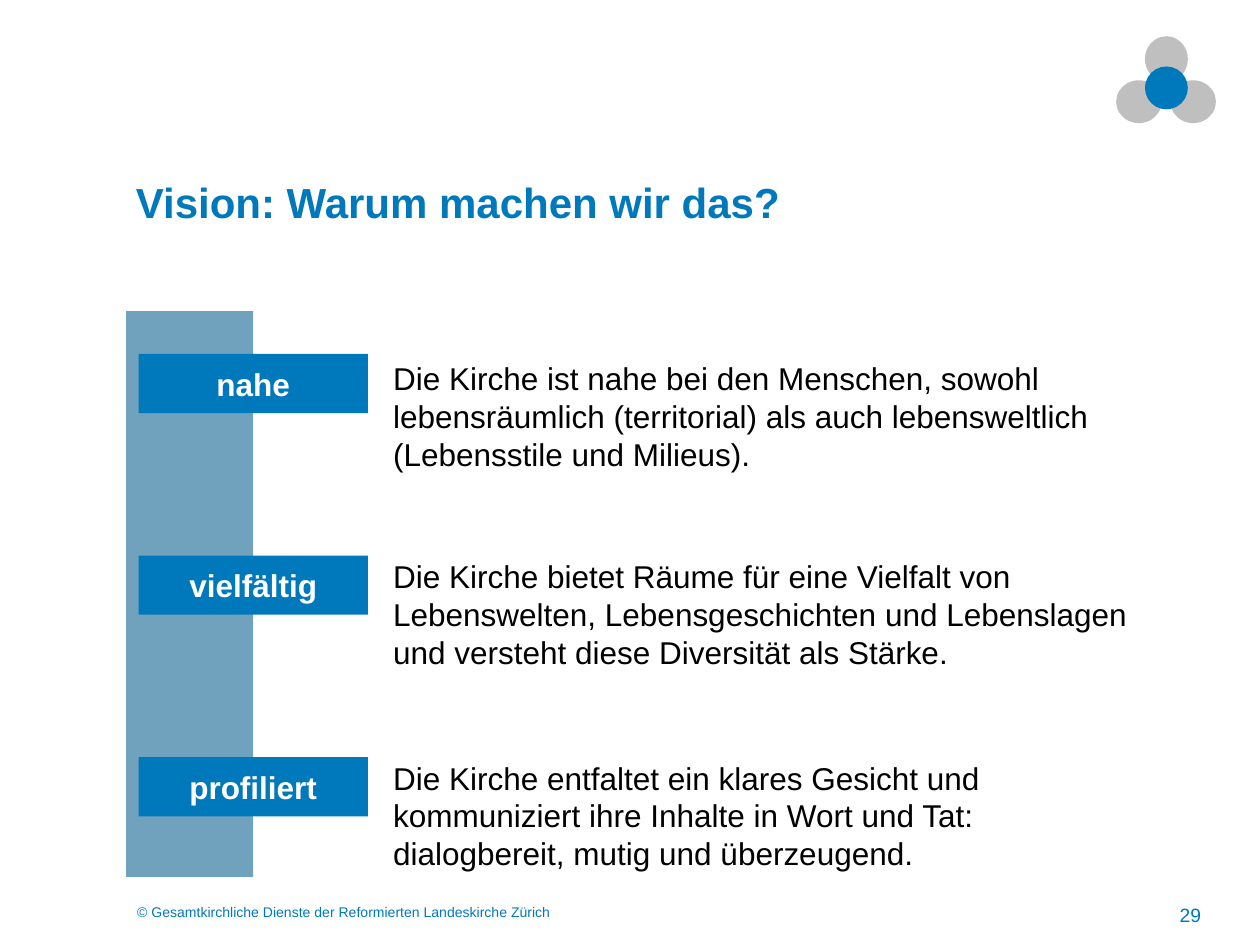
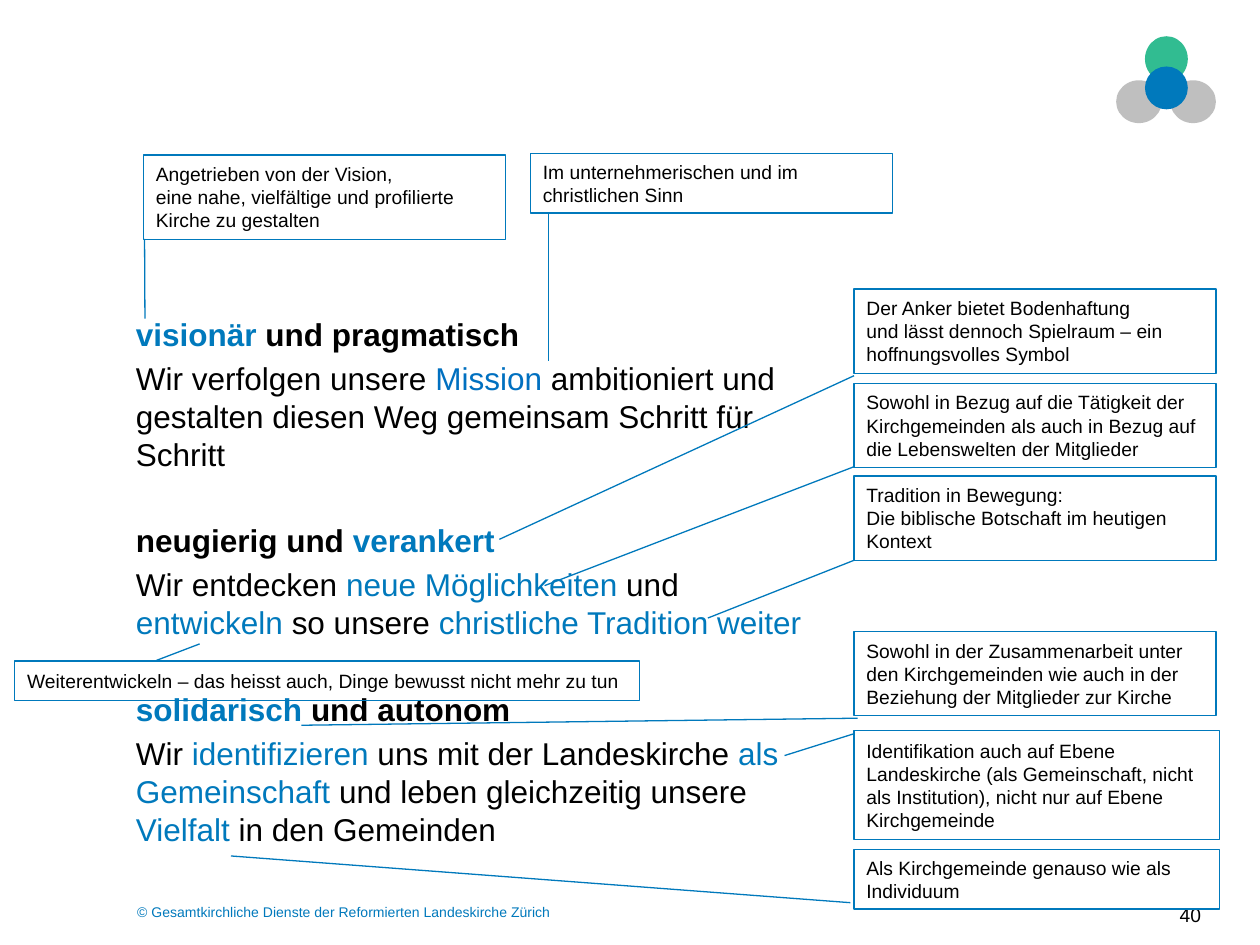
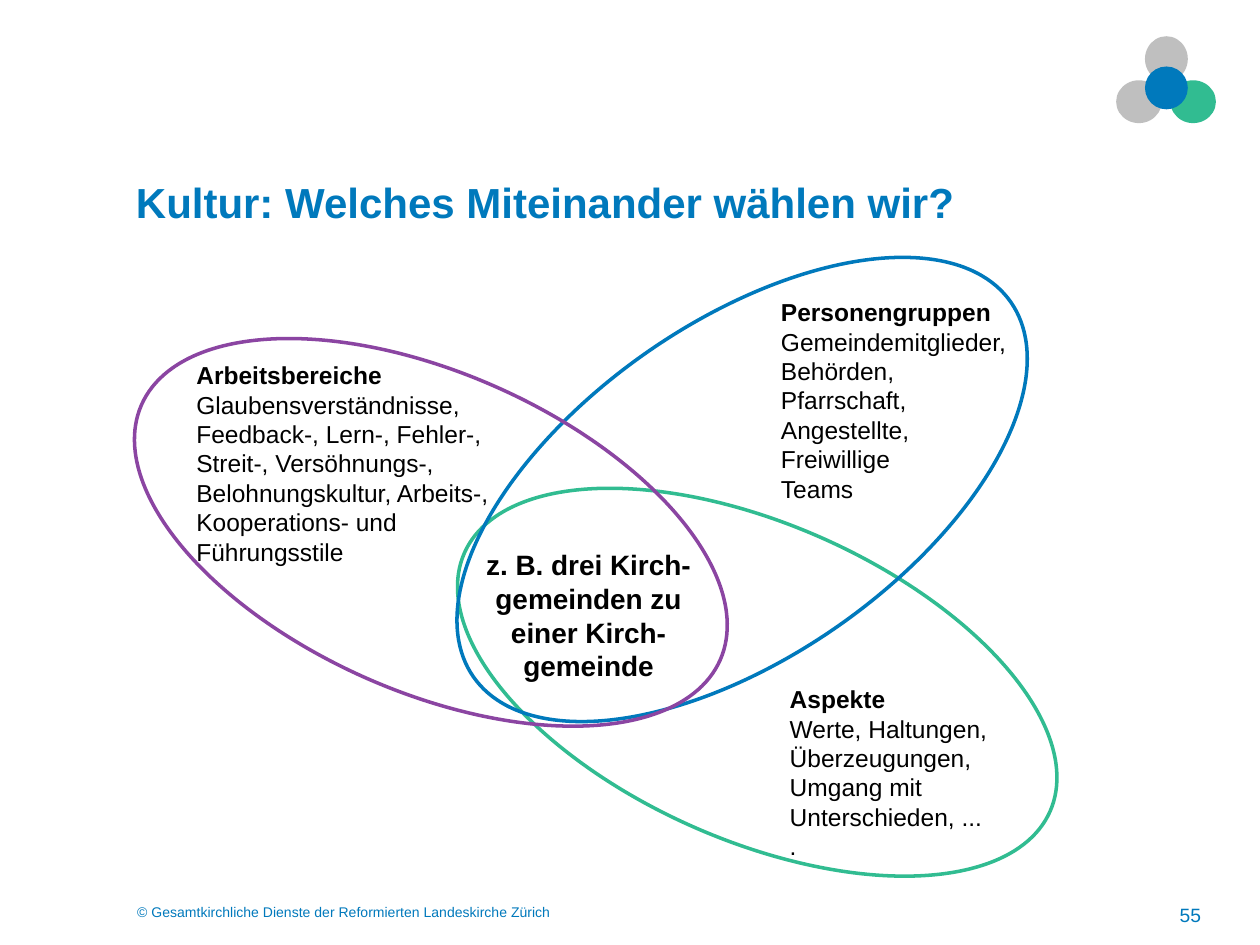
from dataclasses import dataclass
from pptx import Presentation
from pptx.dml.color import RGBColor
from pptx.enum import shapes, text
from pptx.util import Pt


@dataclass(frozen=True)
class Theme:
    """Colours, type sizes and line widths of the deck."""
    font: str = "Arial"
    blue: str = "0079BC"
    sky: str = "0070C0"
    steel: str = "71A2BD"
    green: str = "31BC91"
    plum: str = "8B45A2"
    grey: str = "BFBFBF"
    black: str = "000000"
    white: str = "FFFFFF"
    head: int = 24
    body: int = 18
    core: int = 16
    list: int = 14
    note: int = 11
    foot: int = 8
    thin: float = 0.75
    thick: float = 2


T = Theme()
FORM = shapes.MSO_SHAPE
LEFT, MID, RIGHT = text.PP_ALIGN.LEFT, text.PP_ALIGN.CENTER, text.PP_ALIGN.RIGHT
TOP, CENTRE = text.MSO_ANCHOR.TOP, text.MSO_ANCHOR.MIDDLE
PAD = (7.2, 3.6)
OWNER = "© Gesamtkirchliche Dienste der Reformierten Landeskirche Zürich"

VALUES = [
    ("nahe", 202.3, ["Die Kirche ist nahe bei den Menschen, sowohl lebensräumlich "
                     "(territorial) als auch lebensweltlich (Lebensstile und Milieus)."]),
    ("vielfältig", 315.4, ["Die Kirche bietet Räume für eine Vielfalt von Lebenswelten, "
                           "Lebensgeschichten und Lebenslagen und versteht diese "
                           "Diversität als Stärke."]),
    ("profiliert", 430.6, ["Die Kirche entfaltet ein klares Gesicht und kommuniziert "
                           "ihre Inhalte in Wort und Tat:",
                           "dialogbereit, mutig und überzeugend."]),
]

CREED = [
    ([("visionär", T.blue), " und pragmatisch"],
     ["Wir verfolgen unsere ", ("Mission ", T.sky),
      "ambitioniert und gestalten diesen Weg gemeinsam Schritt für Schritt"]),
    (["neugierig und ", ("verankert", T.blue)],
     ["Wir entdecken ", ("neue Möglichkeiten ", T.blue), "und ", ("entwickeln", T.blue),
      " so unsere ", ("christliche Tradition weiter", T.blue)]),
    ([("solidarisch ", T.blue), "und autonom"],
     ["Wir ", ("identifizieren", T.blue), " uns mit der Landeskirche ",
      ("als Gemeinschaft", T.blue), " und leben gleichzeitig unsere ",
      ("Vielfalt", T.blue), " in den Gemeinden"]),
]

NOTES = [
    ((82, 88.6, 206.8, 48.2), (0.995, 0.003, 1.94, 0.004),
     ["Angetrieben von der Vision,\neine nahe, vielfältige und profilierte Kirche zu gestalten"]),
    ((303.1, 87.8, 206.8, 34), (1.01, 0.05, 3.49, 0.05),
     ["Im unternehmerischen und im christlichen Sinn"]),
    ((488, 165.1, 206.8, 48.2), (1.03, 0, 2.97, -0.98),
     ["Der Anker bietet Bodenhaftung\nund lässt dennoch Spielraum – ein hoffnungsvolles Symbol"]),
    ((488, 219, 206.8, 48.2), (0.99, 0, 2.4, -0.855),
     ["Sowohl in Bezug auf die Tätigkeit der Kirchgemeinden als auch in Bezug "
      "auf die Lebenswelten der Mitglieder"]),
    ((488, 272, 206.8, 48.2), (1, 0, 1.685, -0.404),
     ["Tradition in Bewegung:", "Die biblische Botschaft im heutigen Kontext"]),
    ((8.4, 377.8, 357.2, 22.4), (-0.02, 0.227, -0.44, 0.296),
     ["Weiterentwickeln – das heisst auch, Dinge bewusst nicht mehr zu tun"]),
    ((488, 360.8, 206.8, 48.2), (1.03, 0.01, 1.114, -1.527),
     ["Sowohl in der Zusammenarbeit unter den Kirchgemeinden wie auch in der "
      "Beziehung der Mitglieder zur Kirche"]),
    ((488, 417.4, 208.8, 62.4), (0.03, 0, 0.23, -0.19),
     ["Identifikation auch auf Ebene Landeskirche (als Gemeinschaft, nicht als "
      "Institution), nicht nur auf Ebene Kirchgemeinde"]),
    ((488, 485.4, 208.8, 34), (0.895, -0.01, 0.11, -1.705),
     ["Als Kirchgemeinde genauso wie als Individuum"]),
]

RINGS = [
    ((249.8, 299.5, 365.8, 180.7), 23.8, T.green),
    ((236.9, 184.3, 374.4, 190.8), 325.1, T.blue),
    ((65.5, 213.1, 361.4, 182.2), 23.8, T.plum),
]

GROUPS = [
    ((444.2, 387.4, 128.2, 92.2), "Aspekte",
     ["Werte, Haltungen,", "Überzeugungen,", "Umgang mit\nUnterschieden, ...\n."]),
    ((439.2, 166.3, 144, 126), "Personengruppen",
     ["Gemeindemitglieder,", "Behörden,", "Pfarrschaft,", "Angestellte,",
      "Freiwillige", "Teams"]),
    ((105.1, 202.3, 181.4, 126), "Arbeitsbereiche",
     ["Glaubensverständnisse, Feedback-, Lern-, Fehler-, Streit-, Versöhnungs-, "
      "Belohnungskultur, Arbeits-, Kooperations- und Führungsstile"]),
]


def put(item, form):
    """Set each format value on an object."""
    for key, val in form.items():
        setattr(item, key, val)


def pts(box):
    """Turn a box of numbers into lengths."""
    return [Pt(round(n, 2)) for n in box]


def move(box, left, top, wide, high):
    """Return a box placed relative to the corner of another."""
    return box[0] + left, box[1] + top, wide, high


def write(shape, paras, size, color=T.black, bold=False, align=LEFT,
          anchor=TOP, pad=PAD):
    """Fill a shape with paragraphs of (parts, bold, space before)."""
    frame = shape.text_frame
    side, edge = pts(pad)
    put(frame, {"word_wrap": True, "vertical_anchor": anchor,
                "margin_left": side, "margin_right": side,
                "margin_top": edge, "margin_bottom": edge})
    for num, para in enumerate(paras):
        parts, heavy, gap = ([para], bold, 0) if isinstance(para, str) else para
        line = frame.paragraphs[0] if num == 0 else frame.add_paragraph()
        put(line, {"alignment": align, "space_before": Pt(gap)})
        put(line.font, {"size": Pt(size), "name": T.font})
        for part in parts:
            words, tint = (part, color) if isinstance(part, str) else part
            for row, piece in enumerate(words.split("\n")):
                if row:
                    line.add_line_break()
                run = line.add_run()
                run.text = piece
                put(run.font, {"size": Pt(size), "name": T.font, "bold": heavy})
                run.font.color.rgb = RGBColor.from_string(tint)


def label(slide, box, paras, size, **form):
    """Add a text box."""
    write(slide.shapes.add_textbox(*pts(box)), paras, size, **form)


def draw(host, kind, box, fill=None, line=None, width=T.thin):
    """Add a plain preset shape."""
    shape = host.shapes.add_shape(kind, *pts(box))
    shape.shadow.inherit = False
    if fill:
        shape.fill.solid()
        shape.fill.fore_color.rgb = RGBColor.from_string(fill)
    else:
        shape.fill.background()
    if line:
        shape.line.color.rgb = RGBColor.from_string(line)
        shape.line.width = Pt(width)
    else:
        shape.line.fill.background()
    return shape


def mark(slide, box, lit):
    """Add the section marker with one circle lit."""
    group = slide.shapes.add_group_shape()
    dots = [("top", 16.5, 0, 24.5, 26), ("left", 0, 25.2, 26, 24.5),
            ("right", 31, 25.2, 26, 24.5), ("mid", 16.5, 17.3, 24.5, 24.5)]
    for name, *spot in dots:
        tint = T.blue if name == "mid" else T.green if name == lit else T.grey
        draw(group, FORM.OVAL, move(box, *spot), tint)


def start(deck, num, title=None, lit=None, tint=T.blue):
    """Add a slide with title, footer, number and marker."""
    slide = deck.slides.add_slide(deck.slide_layouts[6])
    if title:
        label(slide, (70.6, 97.2, 614.9, 73.4), [title], T.head, color=T.blue, bold=True)
    label(slide, (71.3, 512.6, 358.6, 27.4), [OWNER], T.foot, color=T.blue)
    label(slide, (525.6, 512.6, 167.8, 21.6), [str(num)], T.note, color=tint, align=RIGHT)
    mark(slide, (637.8, 20.7, 57, 49.7), lit)
    return slide


def vision(slide, box):
    """Place the band, its three tags and their texts."""
    left, top, wide, high = box
    draw(slide, FORM.RECTANGLE, (left, top, 72.7, high), T.steel)
    for num, (name, line, paras) in enumerate(VALUES):
        tag = draw(slide, FORM.RECTANGLE,
                   move(box, 7.2, 24.5 + num * 115.2, 131, 33.8), T.blue)
        write(tag, [name], T.body, color=T.white, bold=True, align=MID, anchor=CENTRE)
        label(slide, (left + 146.2, line, wide - 146.2, 74.2), paras, T.body,
              pad=(6.5, 2.9))


def creed(slide, box):
    """Place the three mottos, each with its sentence."""
    paras = []
    for num, (motto, words) in enumerate(CREED):
        paras += [(motto, True, 28 if num else 0), (words, False, 3.6)]
    label(slide, box, paras, T.body)


def notes(slide):
    """Place the callouts with their pointers."""
    for box, ends, paras in NOTES:
        call = draw(slide, FORM.LINE_CALLOUT_1, box, line=T.blue)
        for num, end in enumerate(ends):
            call.adjustments[num] = end
        write(call, paras, T.note, anchor=CENTRE)


def culture(slide, core):
    """Place the three rings, their lists and the shared core."""
    for box, turn, tint in RINGS:
        ring = draw(slide, FORM.OVAL, box, line=tint, width=T.thick)
        ring.rotation = turn
    for box, name, rows in GROUPS:
        label(slide, box, [([name], True, 0), *rows], T.list)
    label(slide, core, ["z. B. drei Kirch-gemeinden zu einer Kirch-gemeinde"],
          T.core, bold=True, align=MID)


def main():
    """Build and save the deck."""
    deck = Presentation()
    put(deck, {"slide_width": Pt(720), "slide_height": Pt(540)})
    vision(start(deck, 29, "Vision: Warum machen wir das?"), (72, 177.8, 589.7, 323.3))
    slide = start(deck, 40, lit="top", tint=T.black)
    creed(slide, (70.6, 176.4, 402.5, 324))
    notes(slide)
    culture(start(deck, 55, "Kultur: Welches Miteinander wählen wir?", "right"),
            (257.8, 309.6, 157, 85))
    deck.save("out.pptx")


if __name__ == "__main__":
    main()
